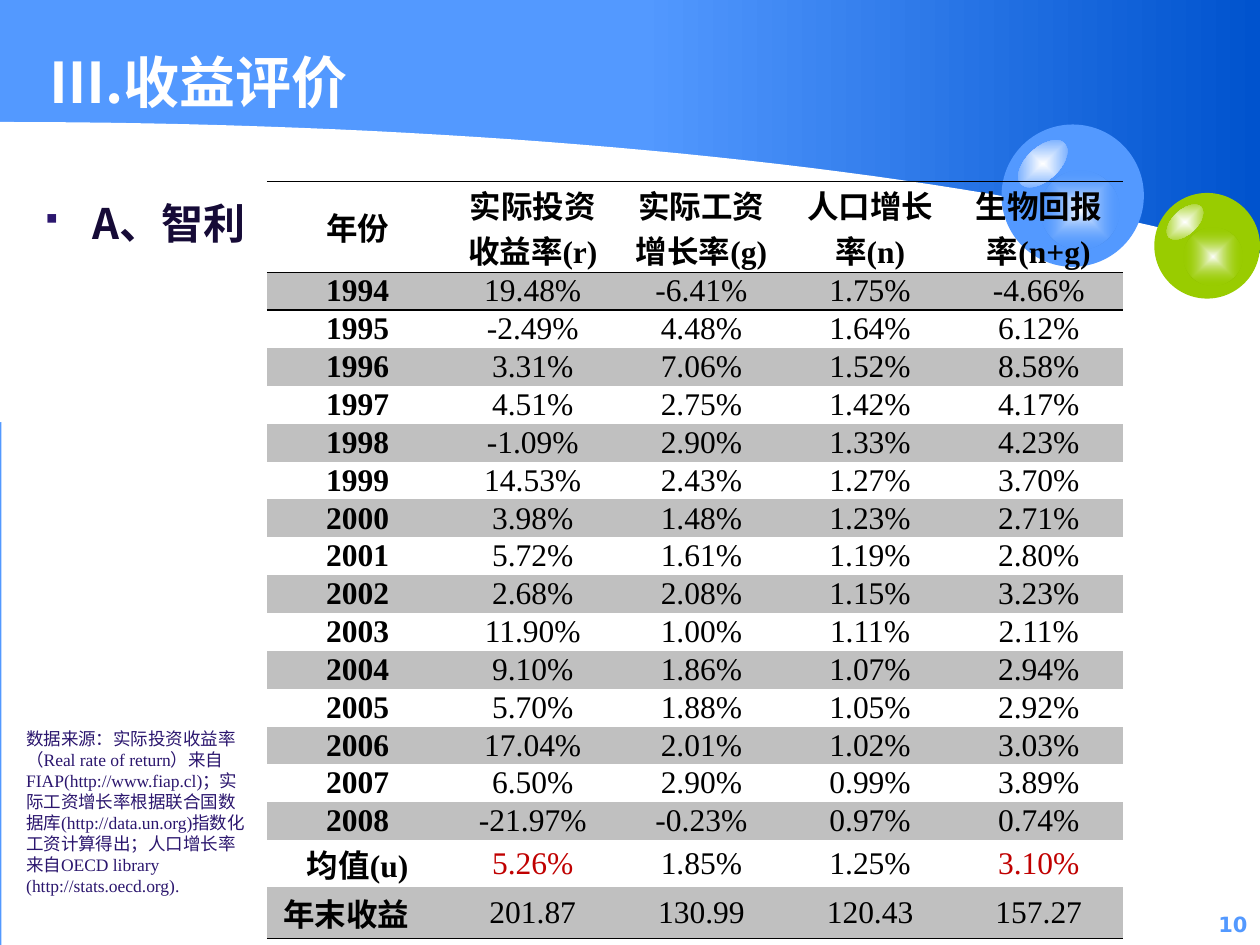
from lxml import etree
from pptx import Presentation
from pptx.dml.color import RGBColor
from pptx.enum import shapes, text
from pptx.oxml import parse_xml
from pptx.oxml.ns import nsdecls, qn
from pptx.util import Cm, Pt

BLUE, DEEP_BLUE, GREEN, WHITE = "5399FF", "0053CE", "99CC00", "FFFFFF"
BLACK, GREY, RED, VIOLET, INK = "000000", "C0C0C0", "C00000", "2B166E", "160B37"
SANS, SERIF, NUMBER_FONT = "Noto Sans CJK SC", "Times New Roman", "DejaVu Sans"
NO_TABLE_STYLE = "{2D5ABB26-0587-4C30-8999-92F81FD0307C}"

HEADINGS = ["年份", "实际投资收益率(r)", "实际工资增长率(g)", "人口增长率(n)", "生物回报率(n+g)"]
YEARLY_RATES = """
1994 19.48% -6.41% 1.75% -4.66%
1995 -2.49% 4.48% 1.64% 6.12%
1996 3.31% 7.06% 1.52% 8.58%
1997 4.51% 2.75% 1.42% 4.17%
1998 -1.09% 2.90% 1.33% 4.23%
1999 14.53% 2.43% 1.27% 3.70%
2000 3.98% 1.48% 1.23% 2.71%
2001 5.72% 1.61% 1.19% 2.80%
2002 2.68% 2.08% 1.15% 3.23%
2003 11.90% 1.00% 1.11% 2.11%
2004 9.10% 1.86% 1.07% 2.94%
2005 5.70% 1.88% 1.05% 2.92%
2006 17.04% 2.01% 1.02% 3.03%
2007 6.50% 2.90% 0.99% 3.89%
2008 -21.97% -0.23% 0.97% 0.74%
"""
MEAN = ["均值(u)", "5.26%", "1.85%", "1.25%", "3.10%"]
FINAL_VALUE = ["年末收益", "201.87", "130.99", "120.43", "157.27"]
SOURCE_NOTE = (
    "数据来源：实际投资收益率（Real rate of return）来自FIAP(http://www.fiap.cl)；"
    "实际工资增长率根据联合国数据库(http://data.un.org)指数化工资计算得出；"
    "人口增长率来自OECD library (http://stats.oecd.org)."
)


def colour(value):
    return RGBColor.from_string(value)


def set_all(target, values):
    for name, value in values.items():
        setattr(target, name, value)


def write(paragraph, words, size, font_name, font_colour, bold=False):
    run = paragraph.add_run()
    run.text = words
    set_all(run.font, {"size": Pt(size), "bold": bold})
    run.font.color.rgb = colour(font_colour)
    run.font.name = font_name
    east_asian = etree.SubElement(run.font._element, qn("a:ea"))
    east_asian.set("typeface", SANS)


def paint(shape, fill):
    shape.shadow.inherit = False
    shape.fill.solid()
    shape.fill.fore_color.rgb = colour(fill)
    shape.line.fill.background()


def paint_gradient(shape, start, end, direction, end_alpha=100):
    """Replace the solid fill by a gradient; direction is its a:lin or a:path element."""
    paint(shape, start)
    properties = shape._element.spPr
    gradient = parse_xml(
        f'<a:gradFill {nsdecls("a")} rotWithShape="1"><a:gsLst>'
        f'<a:gs pos="0"><a:srgbClr val="{start}"/></a:gs>'
        f'<a:gs pos="100000"><a:srgbClr val="{end}"><a:alpha val="{end_alpha * 1000}"/>'
        f'</a:srgbClr></a:gs></a:gsLst>{direction}</a:gradFill>')
    properties.replace(properties.find(qn("a:solidFill")), gradient)


def add_preset(parent, kind, left, top, width, height):
    return parent.shapes.add_shape(kind, Cm(left), Cm(top), Cm(width), Cm(height))


def add_text_box(slide, left, top, width, height, **frame_values):
    box = slide.shapes.add_textbox(Cm(left), Cm(top), Cm(width), Cm(height))
    set_all(box.text_frame, {"word_wrap": True, **frame_values})
    return box.text_frame.paragraphs[0]


def add_backdrop(slide, width, height):
    slide.background.fill.solid()
    slide.background.fill.fore_color.rgb = colour(BLUE)
    rectangle = shapes.MSO_SHAPE.RECTANGLE
    sky = add_preset(slide, rectangle, width - 12.52, 0, 12.52, 7.54)
    paint_gradient(sky, BLUE, DEEP_BLUE, '<a:lin ang="0" scaled="1"/>')
    paint(add_preset(slide, rectangle, 0.03, 5.11, width - 0.03, height - 5.11), WHITE)
    add_wave(slide, [(0, 2.46), (10.19, 2.46), (19.74, 3.45), (25.45, 5.13)], 8.51)


def add_wave(slide, controls, bottom, steps=40):
    """Fill the area between a cubic Bézier curve and the bottom left corner."""
    points = []
    for step in range(steps + 1):
        t = step / steps
        weights = ((1 - t) ** 3, 3 * t * (1 - t) ** 2, 3 * t * t * (1 - t), t ** 3)
        points.append(tuple(Cm(sum(w * point[axis] for w, point in zip(weights, controls)))
                            for axis in (0, 1)))
    builder = slide.shapes.build_freeform(*points[0], scale=1.0)
    builder.add_line_segments(points[1:] + [(0, Cm(bottom))], close=True)
    paint(builder.convert_to_shape(), WHITE)


def add_ball(slide, left, top, size, fill):
    ball = slide.shapes.add_group_shape()
    oval = shapes.MSO_SHAPE.OVAL
    from_centre = ('<a:path path="shape"><a:fillToRect l="50000" t="50000" '
                   'r="50000" b="50000"/></a:path>')
    paint(add_preset(ball, oval, left, top, size, size), fill)
    glow = add_preset(ball, oval, left + 0.275 * size, top + 0.325 * size,
                      0.555 * size, 0.555 * size)
    paint_gradient(glow, WHITE, fill, from_centre, end_alpha=0)
    highlight = add_preset(ball, oval, left + 0.08 * size, top + 0.16 * size,
                           0.42 * size, 0.23 * size)
    paint_gradient(highlight, WHITE, fill, from_centre)
    highlight.rotation = 317.2


def add_country_bullet(slide, left, top, width, height):
    paragraph = add_text_box(slide, left, top, width, height)
    paragraph.space_before = Pt(4.8)
    properties = paragraph._p.get_or_add_pPr()
    properties.set("marL", str(Cm(0.95)))
    properties.set("indent", str(-Cm(0.95)))
    for mark in (f'<a:buClr {nsdecls("a")}><a:srgbClr val="{VIOLET}"/></a:buClr>',
                 f'<a:buSzPct {nsdecls("a")} val="70000"/>',
                 f'<a:buFont {nsdecls("a")} typeface="Wingdings" charset="2"/>',
                 f'<a:buChar {nsdecls("a")} char="§"/>'):
        properties.append(parse_xml(mark))
    write(paragraph, "A、智利", 24, SANS, INK, True)


def add_borders(cell, sides):
    """Draw black rules on the given sides: T for top, B for bottom."""
    for index, side in enumerate(sides):
        cell._tc.get_or_add_tcPr().insert(index, parse_xml(
            f'<a:ln{side} {nsdecls("a")} w="12700"><a:solidFill>'
            f'<a:srgbClr val="{BLACK}"/></a:solidFill></a:ln{side}>'))


def add_returns_table(slide, left, top):
    yearly = [line.split() for line in YEARLY_RATES.strip().splitlines()]
    rows = [HEADINGS, *yearly, MEAN, FINAL_VALUE]
    widths = [3.66] + [3.4] * 4
    heights = [1.83] + [0.7] * len(yearly) + [0.94, 1.04]
    last = len(rows) - 1
    table = slide.shapes.add_table(len(rows), len(widths), Cm(left), Cm(top),
                                   Cm(sum(widths)), Cm(sum(heights))).table
    set_all(table, {"first_row": False, "horz_banding": False})
    table._tbl.tblPr.find(qn("a:tableStyleId")).text = NO_TABLE_STYLE
    for column, width in zip(table.columns, widths):
        column.width = Cm(width)
    for row, height in zip(table.rows, heights):
        row.height = Cm(height)

    borders = {0: "TB", 1: "T", last: "B"}
    for r, values in enumerate(rows):
        for c, value in enumerate(values):
            cell = table.cell(r, c)
            set_all(cell, {"margin_left": Cm(0.18), "margin_right": Cm(0.18),
                           "margin_top": 0, "margin_bottom": 0,
                           "vertical_anchor": text.MSO_ANCHOR.MIDDLE})
            if r % 2:
                cell.fill.solid()
                cell.fill.fore_color.rgb = colour(GREY)
            else:
                cell.fill.background()
            add_borders(cell, borders.get(r, ""))
            paragraph = cell.text_frame.paragraphs[0]
            paragraph.alignment = text.PP_ALIGN.CENTER
            is_key_mean = values is MEAN and c in (1, 4)
            write(paragraph, value, 18, SERIF, RED if is_key_mean else BLACK,
                  bold=r == 0 or c == 0)
    label = table.cell(last, 0)
    label.margin_left = Cm(0.33)
    label.text_frame.paragraphs[0].alignment = text.PP_ALIGN.LEFT


def main():
    presentation = Presentation()
    set_all(presentation, {"slide_width": Cm(25.4), "slide_height": Cm(19.05)})
    slide = presentation.slides.add_slide(presentation.slide_layouts[6])
    add_backdrop(slide, 25.4, 19.05)
    add_ball(slide, 23.27, 3.89, 2.13, GREEN)
    add_ball(slide, 20.19, 2.51, 2.87, BLUE)

    page_number = add_text_box(slide, 17.35, 18.26, 8.05, 0.84)
    page_number.alignment = text.PP_ALIGN.RIGHT
    write(page_number, "10", 12, NUMBER_FONT, BLUE, True)
    title = add_text_box(slide, 0.74, 0.61, 23.22, 1.83,
                         vertical_anchor=text.MSO_ANCHOR.BOTTOM)
    write(title, "Ⅲ.收益评价", 32, SANS, WHITE, True)
    add_country_bullet(slide, 0.66, 3.86, 22.86, 12.57)
    add_returns_table(slide, 5.38, 3.66)
    note = add_text_box(slide, 0.28, 14.55, 4.93, 4.11,
                        auto_size=text.MSO_AUTO_SIZE.SHAPE_TO_FIT_TEXT)
    write(note, SOURCE_NOTE, 10, SERIF, VIOLET)
    presentation.save("out.pptx")


if __name__ == "__main__":
    main()
